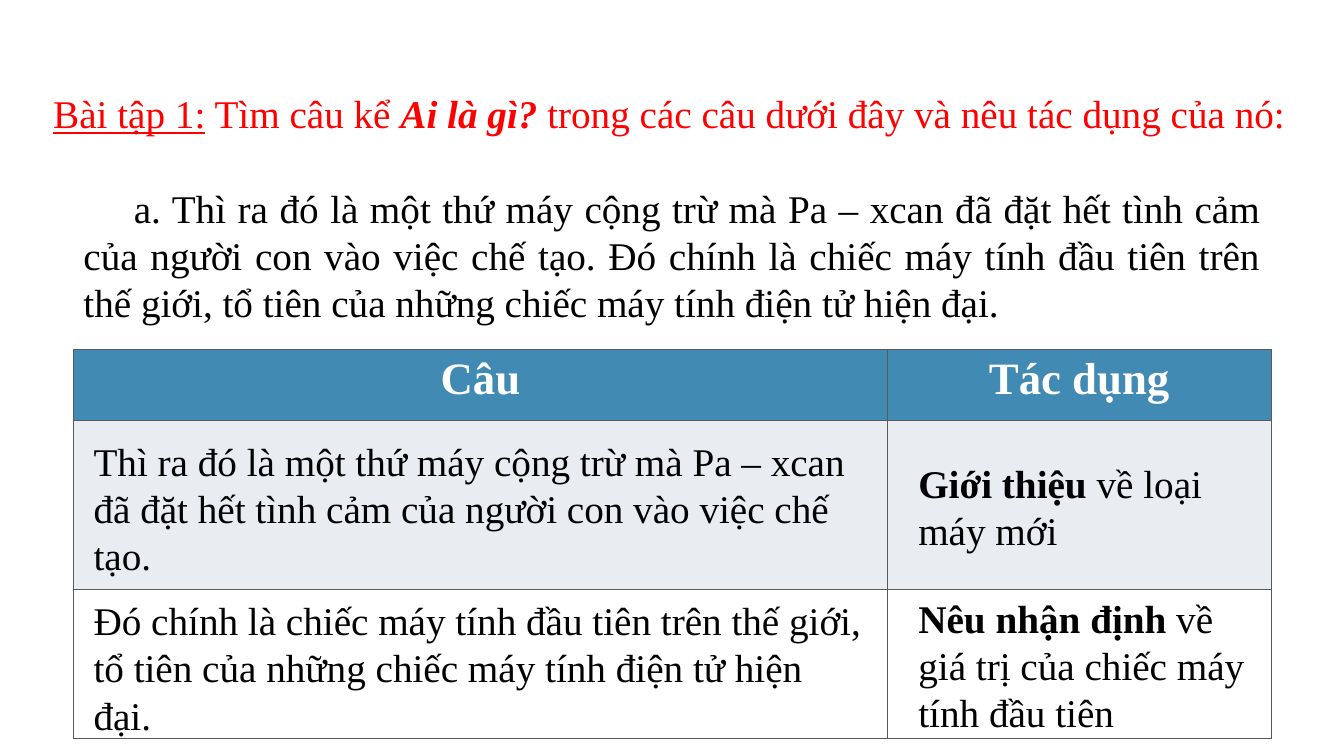
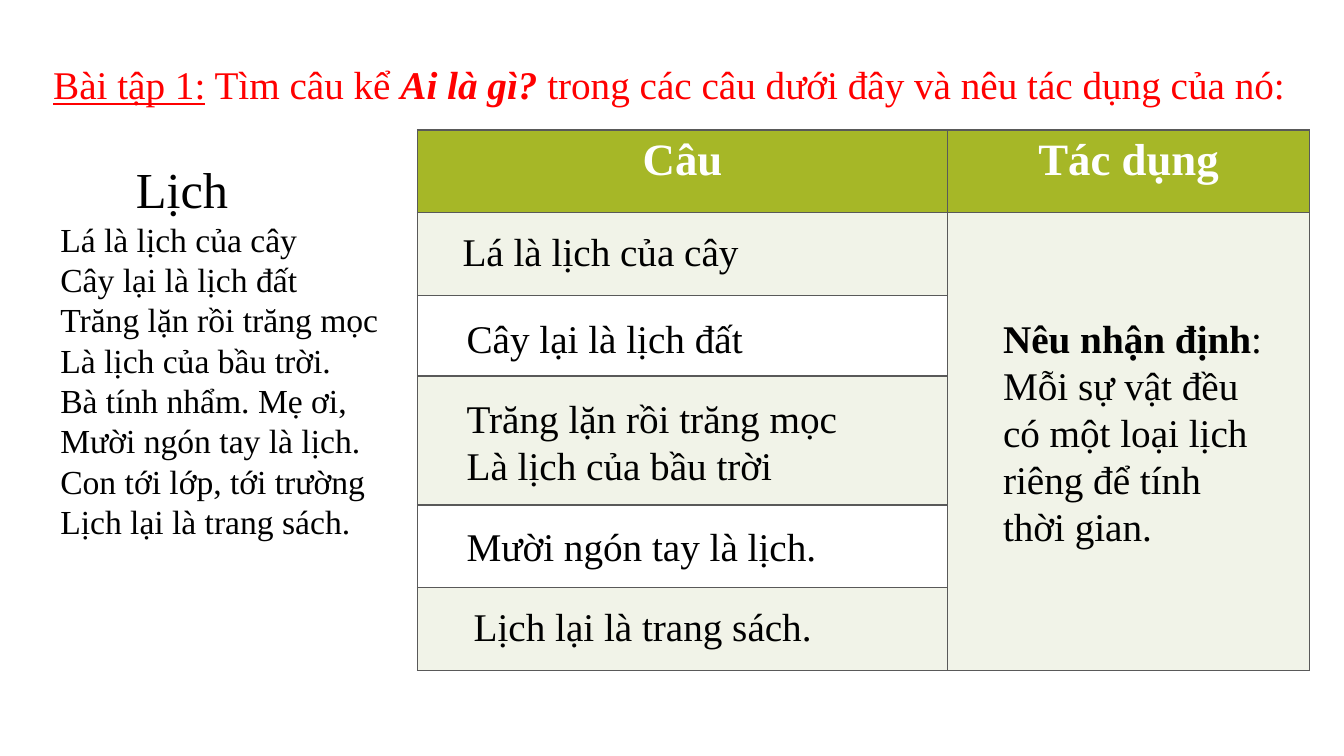
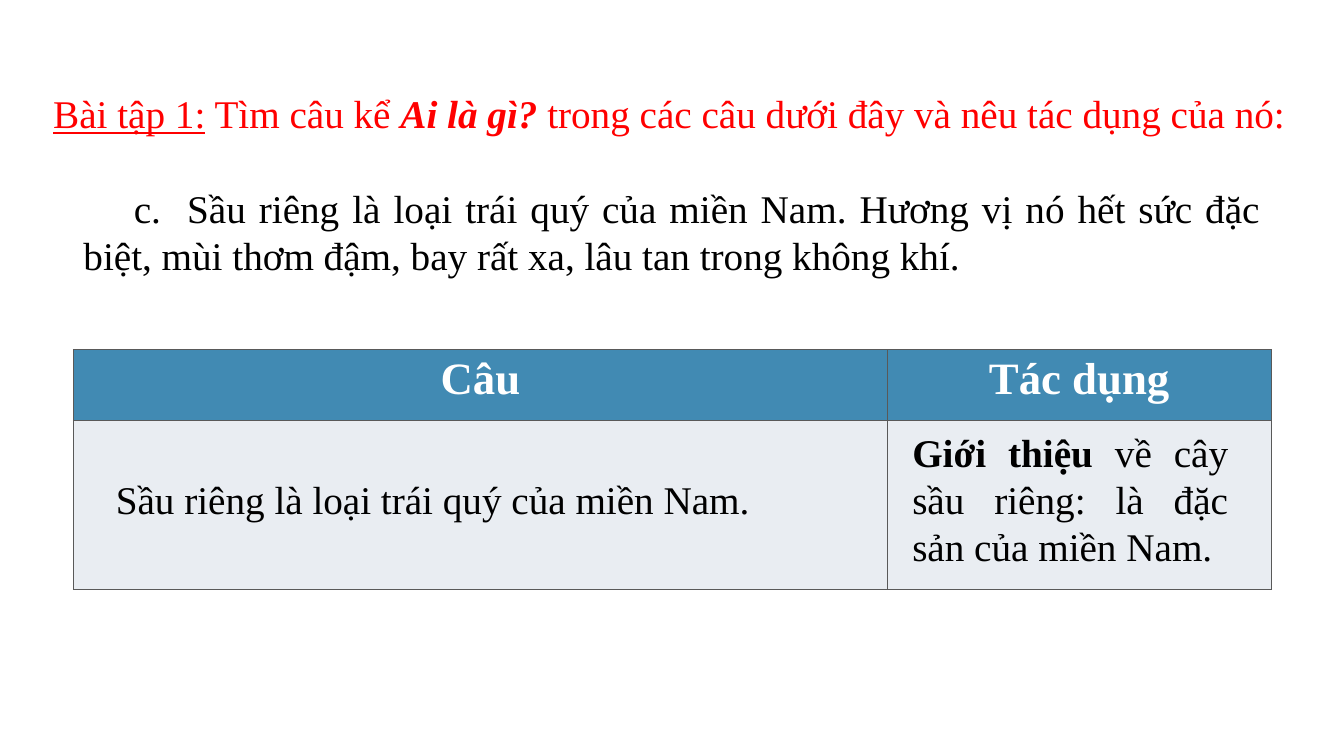
from pptx import Presentation
from pptx.dml.color import RGBColor
from pptx.enum import text
from pptx.oxml import parse_xml
from pptx.oxml.ns import nsdecls
from pptx.util import Emu, Pt

PX = 9144  # 100 px to the inch
FONT = "Times New Roman"
RED, BLACK, WHITE, GRID = "FF0000", "000000", "FFFFFF", "595959"
BLUE, BLUE_TINT = "418AB3", "E9EDF2"
GREEN, GREEN_TINT = "A6B727", "F1F3E8"
JUSTIFY = text.PP_ALIGN.JUSTIFY

HEADING = [("Bài tập 1:", "u"), (" Tìm câu kể ", ""), ("Ai là gì? ", "bi"),
           ("trong các câu dưới đây và nêu tác dụng của nó:", "")]
HEADERS = ("Câu", "Tác dụng")
POEM = ["Lá là lịch của cây", "Cây lại là lịch đất", "Trăng lặn rồi trăng mọc",
        "Là lịch của bầu trời.", "Bà tính nhẩm. Mẹ ơi,", "Mười ngón tay là lịch.",
        "Con tới lớp, tới trường", "Lịch lại là trang sách."]


def px(length):
    return Emu(length * PX)


def rgb(value):
    return RGBColor.from_string(value)


def write(paragraph, runs, size=28, color=BLACK, align=None, indent=0):
    """Fill a paragraph from a string or from (text, style) pairs; styles are b, i, u."""
    if indent:
        properties = paragraph._p.get_or_add_pPr()
        properties.set("marL", "0")
        properties.set("indent", str(px(indent)))
    if align is not None:
        paragraph.alignment = align
    for words, style in [(runs, "")] if isinstance(runs, str) else runs:
        run = paragraph.add_run()
        run.text = words
        font = run.font
        font.name, font.size = FONT, Pt(size)
        font.color.rgb = rgb(color)
        font.bold, font.italic, font.underline = (mark in style for mark in "biu")


def add_text(slide, box, paragraphs, **style):
    """Place a text box; each paragraph may be a (runs, own style) pair with a dict."""
    frame = slide.shapes.add_textbox(*map(px, box)).text_frame
    frame.word_wrap = True
    frame.auto_size = text.MSO_AUTO_SIZE.SHAPE_TO_FIT_TEXT
    for index, runs in enumerate(paragraphs):
        paragraph = frame.add_paragraph() if index else frame.paragraphs[0]
        write(paragraph, runs, **style)
    return frame


def add_heading(slide, top):
    add_text(slide, (43, top, 1247, 57), [HEADING], color=RED)


def add_passage(slide, height, words):
    add_text(slide, (73, 178, 1187, height), [words], align=JUSTIFY, indent=50)


def add_poem(slide, box):
    frame = add_text(slide, box, ["Lịch"], size=36, indent=125)
    for line in POEM:
        write(frame.add_paragraph(), line, size=24, align=JUSTIFY, indent=50)


def paint_cell(cell, color):
    properties = cell._tc.get_or_add_tcPr()
    for side in "LRTB":
        properties.append(parse_xml(
            f'<a:ln{side} {nsdecls("a")} w="12700"><a:solidFill>'
            f'<a:srgbClr val="{GRID}"/></a:solidFill></a:ln{side}>'))
    cell.fill.solid()
    cell.fill.fore_color.rgb = rgb(color)


def add_answer_table(slide, left, top, columns, rows, colors, answers, merge_effects=False):
    """Draw the grid, then the answers at offsets from its top left corner."""
    table = slide.shapes.add_table(len(rows), len(columns), px(left), px(top),
                                   px(sum(columns)), px(sum(rows))).table
    for column, width in zip(table.columns, columns):
        column.width = px(width)
    for row, height in zip(table.rows, rows):
        row.height = px(height)

    # Header row, then tinted and white rows in turn
    header_color, tint = colors
    for row in range(len(rows)):
        color = header_color if row == 0 else tint if row % 2 else WHITE
        for column in range(len(columns)):
            paint_cell(table.cell(row, column), color)
    for column, title in enumerate(HEADERS):
        write(table.cell(0, column).text_frame.paragraphs[0], [(title, "b")],
              size=32, color=WHITE, align=text.PP_ALIGN.CENTER)
    if merge_effects:
        table.cell(1, 1).merge(table.cell(len(rows) - 1, 1))

    # Answers
    for (x, y, width, height), paragraphs, align in answers:
        add_text(slide, (left + x, top + y, width, height), paragraphs, align=align)


def add_passage_slide(slide, passage_height, passage, rows, answers):
    add_heading(slide, 84)
    add_passage(slide, passage_height, passage)
    add_answer_table(slide, 73, 347, (807, 381), rows, (BLUE, BLUE_TINT), answers)


def add_poem_slide(slide, answers):
    add_heading(slide, 55)
    add_poem(slide, (0, 152, 460, 475))
    add_answer_table(slide, 414, 129, (526, 359), (82, 82, 80, 128, 82, 82),
                     (GREEN, GREEN_TINT), answers, merge_effects=True)


def main():
    presentation = Presentation()
    presentation.slide_width, presentation.slide_height = px(1333), px(750)

    def new_slide():
        return presentation.slides.add_slide(presentation.slide_layouts[6])

    # Exercise a
    add_passage_slide(
        new_slide(), 151,
        "a. Thì ra đó là một thứ máy cộng trừ mà Pa – xcan đã đặt hết tình cảm của người "
        "con vào việc chế tạo. Đó chính là chiếc máy tính đầu tiên trên thế giới, tổ tiên "
        "của những chiếc máy tính điện tử hiện đại.",
        (70, 168, 148),
        [((10, 82, 784, 151), ["Thì ra đó là một thứ máy cộng trừ mà Pa – xcan đã đặt hết "
                               "tình cảm của người con vào việc chế tạo."], None),
         ((828, 104, 334, 104), [[("Giới thiệu ", "b"), ("về loại máy mới", "")]], None),
         ((10, 240, 784, 151), ["Đó chính là chiếc máy tính đầu tiên trên thế giới, tổ tiên "
                                "của những chiếc máy tính điện tử hiện đại."], None),
         ((828, 238, 359, 151), [[("Nêu nhận định ", "b"),
                                  ("về giá trị của chiếc máy tính đầu tiên", "")]], None)])

    # Exercise b
    add_poem_slide(
        new_slide(),
        [((35, 92, 374, 57), ["Lá là lịch của cây"], None),
         ((39, 178, 403, 57), ["Cây lại là lịch đất"], None),
         ((39, 257, 401, 104), ["Trăng lặn rồi trăng mọc", "Là lịch của bầu trời"], None),
         ((39, 384, 413, 57), ["Mười ngón tay là lịch."], None),
         ((46, 464, 423, 57), ["Lịch lại là trang sách."], None),
         ((571, 178, 283, 246), [[("Nêu nhận định", "b"),
                                  (": Mỗi sự vật đều có một loại lịch riêng để tính "
                                   "thời gian.", "")]], None)])

    # Exercise c
    add_passage_slide(
        new_slide(), 104,
        "c.  Sầu riêng là loại trái quý của miền Nam. Hương vị nó hết sức đặc biệt, mùi thơm "
        "đậm, bay rất xa, lâu tan trong không khí.",
        (70, 168),
        [((32, 120, 709, 57), ["Sầu riêng là loại trái quý của miền Nam."], None),
         ((822, 73, 333, 151), [[("Giới thiệu ", "b"),
                                 ("về cây sầu riêng: là đặc sản của miền Nam.", "")]],
          JUSTIFY)])

    presentation.save("out.pptx")


if __name__ == "__main__":
    main()
